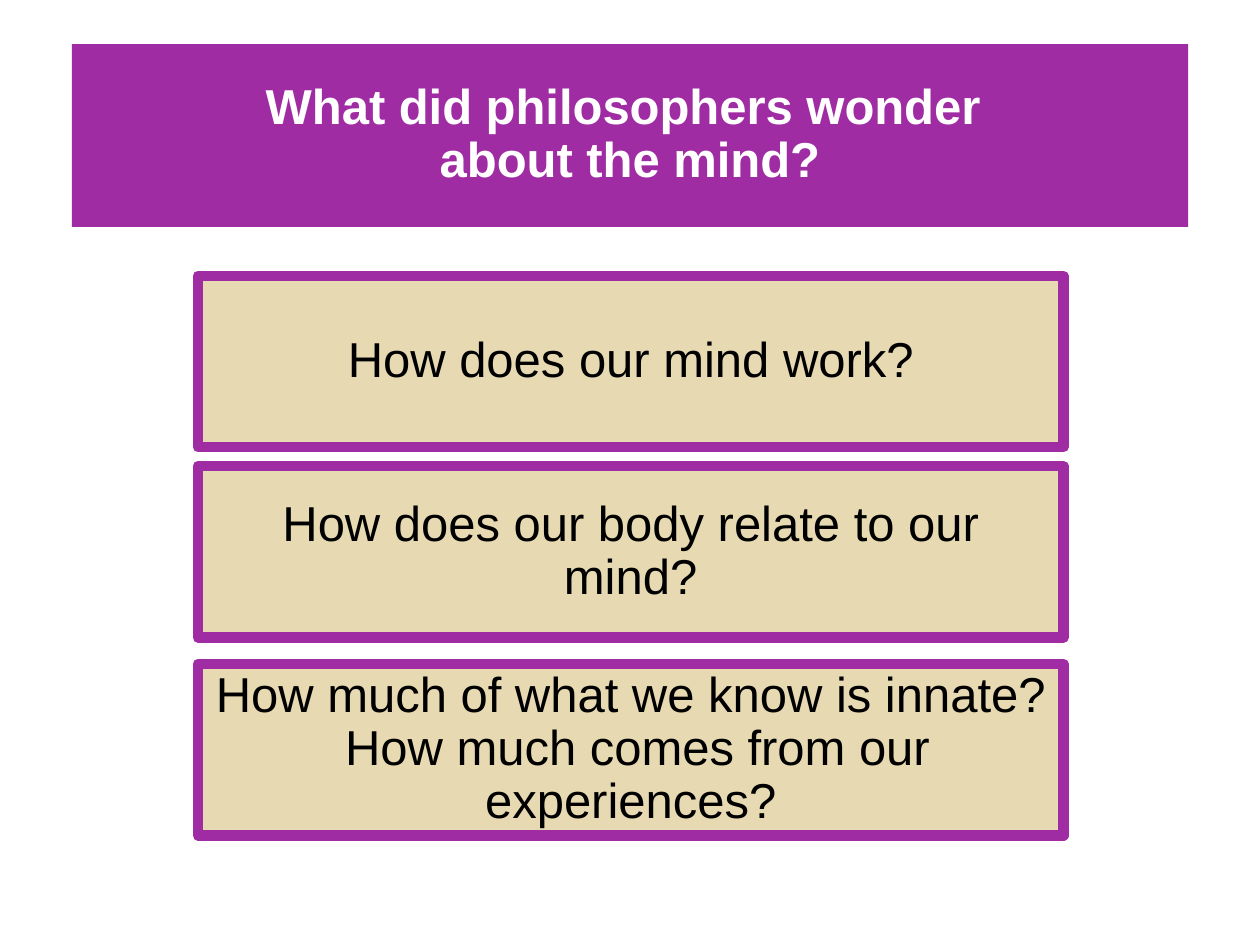
from pptx import Presentation
from pptx import util as u
from pptx.dml.color import RGBColor
from pptx.enum import shapes, text

COLORS = {
    "purple": "A02CA3",
    "sand": "E7D9B1",
    "white": "FFFFFF",
    "black": "000000",
}
TITLE = "What did philosophers wonder \vabout the mind?"
QUESTIONS = [
    (2.19, "How does our mind work?"),
    (3.70, "How does our body relate to our mind?"),
    (5.27, "How much of what we know is innate?  How much comes from our experiences?"),
]


class SlideBuilder:
    font_name = "Arial"
    font_size = u.Pt(28)
    line_spacing = 0.9
    border_width = u.Pt(6)

    def __init__(self, slide):
        self.slide = slide

    def color(self, name):
        return RGBColor.from_string(COLORS[name])

    def box(self, left, top, width, height, fill, words, font_color):
        """Add a borderless filled rectangle with centred text."""
        shape = self.slide.shapes.add_shape(
            shapes.MSO_SHAPE.RECTANGLE,
            u.Inches(left), u.Inches(top), u.Inches(width), u.Inches(height),
        )
        shape.shadow.inherit = False
        shape.fill.solid()
        shape.fill.fore_color.rgb = self.color(fill)
        shape.line.fill.background()

        frame = shape.text_frame
        frame.word_wrap = True
        frame.vertical_anchor = text.MSO_ANCHOR.MIDDLE
        paragraph = frame.paragraphs[0]
        paragraph.text = words
        paragraph.alignment = text.PP_ALIGN.CENTER
        paragraph.line_spacing = self.line_spacing
        for run in paragraph.runs:
            run.font.name = self.font_name
            run.font.size = self.font_size
            run.font.color.rgb = self.color(font_color)
        return shape

    def title(self, words):
        shape = self.box(0.57, 0.35, 8.86, 1.45, "purple", words, "white")
        for run in shape.text_frame.paragraphs[0].runs:
            run.font.bold = True

    def question(self, top, words):
        shape = self.box(1.57, top, 6.87, 1.36, "sand", words, "black")
        shape.line.color.rgb = self.color("purple")
        shape.line.width = self.border_width
        shape.text_frame.paragraphs[0].space_before = u.Pt(7.5)


def main():
    presentation = Presentation()
    presentation.slide_width = u.Inches(10)
    presentation.slide_height = u.Inches(7.5)
    builder = SlideBuilder(presentation.slides.add_slide(presentation.slide_layouts[6]))
    builder.title(TITLE)
    for top, words in QUESTIONS:
        builder.question(top, words)
    presentation.save("out.pptx")


if __name__ == "__main__":
    main()
